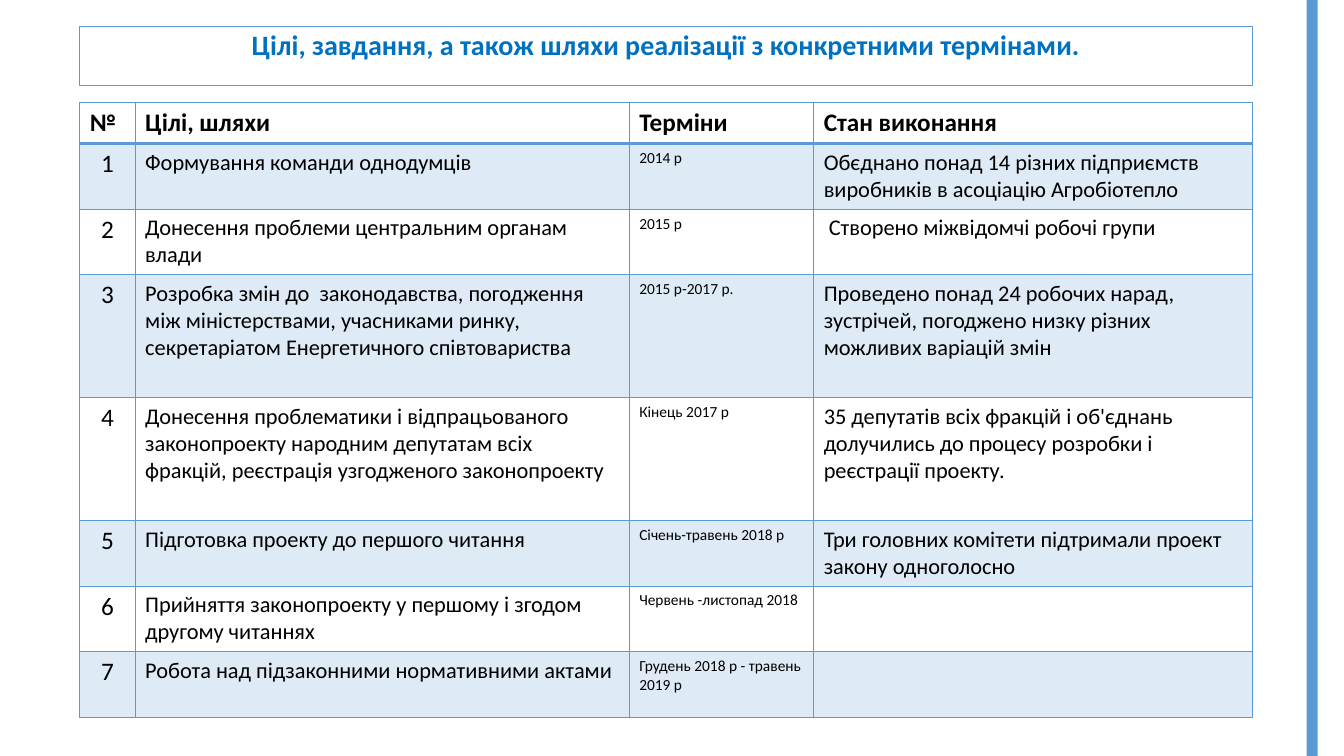
from pptx import Presentation
from pptx import util as u
from pptx.dml.color import RGBColor
from pptx.enum import shapes, text
from pptx.oxml.ns import qn
from lxml import etree

ACCENT = "5B9BD5"
BLACK = "000000"
LEFT, WIDTH = 0.79, 11.63
COLUMN_WIDTHS = [0.55, 4.9, 1.83, 4.35]
ROW_HEIGHTS = [0.37, 0.65, 0.65, 1.22, 1.22, 0.65, 0.65, 0.65]
COLUMN_SIZES = [18, 16, 11, 16]
HEADERS = ["№", "Цілі, шляхи", "Терміни", "Стан виконання"]
GOALS = [
    ("Формування команди однодумців", "2014 р",
     "Обєднано понад 14 різних підприємств виробників в асоціацію Агробіотепло"),
    ("Донесення проблеми центральним органам влади", "2015 р",
     " Створено міжвідомчі робочі групи"),
    ("Розробка змін до  законодавства, погодження між міністерствами, "
     "учасниками ринку, секретаріатом Енергетичного співтовариства", "2015 р-2017 р.",
     "Проведено понад 24 робочих нарад, зустрічей, погоджено низку різних "
     "можливих варіацій змін"),
    ("Донесення проблематики і відпрацьованого законопроекту народним депутатам "
     "всіх фракцій, реєстрація узгодженого законопроекту", "Кінець 2017 р",
     "35 депутатів всіх фракцій і об'єднань долучились до процесу розробки і "
     "реєстрації проекту."),
    ("Підготовка проекту до першого читання", "Січень-травень 2018 р",
     "Три головних комітети підтримали проект закону одноголосно"),
    ("Прийняття законопроекту у першому і згодом другому читаннях",
     "Червень -листопад 2018", ""),
    ("Робота над підзаконними нормативними актами",
     "Грудень 2018 р - травень 2019 р", ""),
]


def color(hex_value):
    return RGBColor.from_string(hex_value)


def write(frame, words, size, hex_value=BLACK, bold=False, **paragraph_format):
    paragraph = frame.paragraphs[0]
    for name, value in paragraph_format.items():
        setattr(paragraph, name, value)
    if not words:
        return
    run = paragraph.add_run()
    run.text = words
    for name, value in {"name": "Calibri", "size": u.Pt(size), "bold": bold}.items():
        setattr(run.font, name, value)
    run.font.color.rgb = color(hex_value)


def add_box(slide, left, top, width, height):
    box = slide.shapes.add_shape(shapes.MSO_SHAPE.RECTANGLE, u.Inches(left),
                                 u.Inches(top), u.Inches(width), u.Inches(height))
    box.shadow.inherit = False
    return box


def add_side_stripe(slide):
    stripe = add_box(slide, 12.96, 0, 0.11, 7.5)
    stripe.fill.solid()
    stripe.fill.fore_color.rgb = color(ACCENT)
    stripe.line.fill.background()


def add_title(slide, words):
    title = add_box(slide, LEFT, 0.26, WIDTH, 0.59)
    title.fill.background()
    title.line.color.rgb = color(ACCENT)
    title.line.width = u.Pt(0.75)
    title.text_frame.word_wrap = True
    title.text_frame.vertical_anchor = text.MSO_ANCHOR.TOP
    write(title.text_frame, words, 20, "0070C0", True, line_spacing=0.9,
          space_before=u.Pt(10), alignment=text.PP_ALIGN.CENTER)


def set_borders(cell, widths):
    """Draw cell edges; widths maps the edge letters L, R, T, B to points."""
    properties = cell._tc.get_or_add_tcPr()
    for edge, width in widths.items():
        line = etree.SubElement(properties, qn(f"a:ln{edge}"), w=str(u.Pt(width)))
        fill = etree.SubElement(line, qn("a:solidFill"))
        etree.SubElement(fill, qn("a:srgbClr"), val=ACCENT)


def fill_cell(cell, shaded):
    if not shaded:
        cell.fill.background()
        return
    cell.fill.solid()
    cell.fill.fore_color.rgb = color(ACCENT)
    tint = cell._tc.tcPr.find(qn("a:solidFill")).find(qn("a:srgbClr"))
    etree.SubElement(tint, qn("a:alpha"), val="20000")


def add_goals_table(slide):
    rows = [HEADERS] + [(str(number), *goal) for number, goal in enumerate(GOALS, 1)]
    table = slide.shapes.add_table(
        len(rows), len(HEADERS), u.Inches(LEFT), u.Inches(1.02),
        u.Inches(WIDTH), u.Inches(sum(ROW_HEIGHTS))).table
    table.horz_banding = False
    for column, width in zip(table.columns, COLUMN_WIDTHS):
        column.width = u.Inches(width)
    for row, height in zip(table.rows, ROW_HEIGHTS):
        row.height = u.Inches(height)
    for r, row in enumerate(rows):
        header = r == 0
        for c, words in enumerate(row):
            cell = table.cell(r, c)
            centred = c == 0 and not header
            write(cell.text_frame, words, 18 if header else COLUMN_SIZES[c], bold=header,
                  alignment=text.PP_ALIGN.CENTER if centred else text.PP_ALIGN.LEFT)
            set_borders(cell, {"L": 1, "R": 1, "T": 2 if r == 1 else 1,
                               "B": 2 if header else 1})
            fill_cell(cell, shaded=r % 2 == 1)


def main():
    deck = Presentation()
    deck.slide_width, deck.slide_height = u.Inches(13.33), u.Inches(7.5)
    slide = deck.slides.add_slide(deck.slide_layouts[6])
    add_side_stripe(slide)
    add_title(slide, "Цілі, завдання, а також шляхи реалізації з конкретними термінами.")
    add_goals_table(slide)
    deck.save("out.pptx")


if __name__ == "__main__":
    main()
